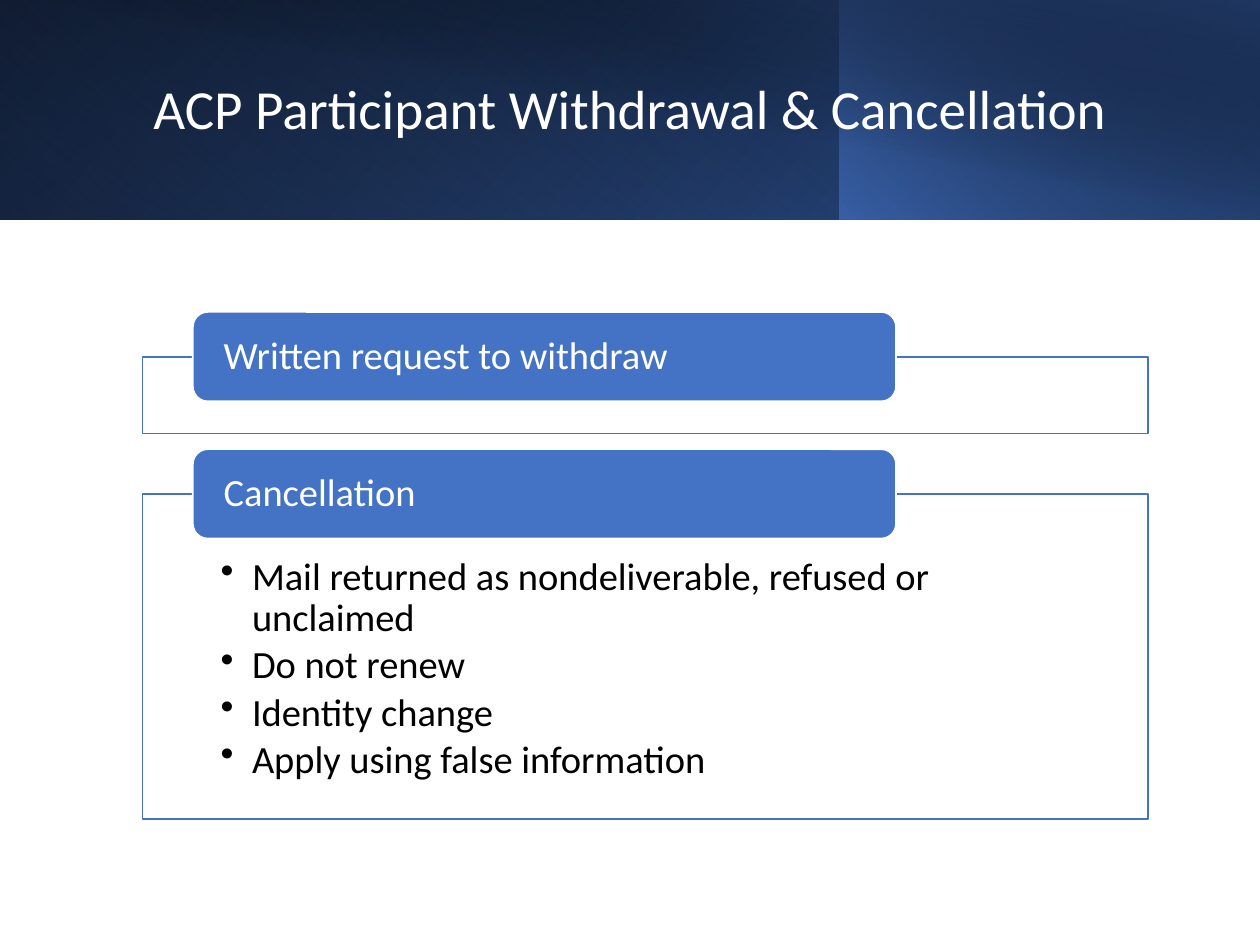
"""Build the slide on participant withdrawal and cancellation."""
from dataclasses import dataclass

from lxml.etree import SubElement
from pptx import Presentation
from pptx.dml.color import RGBColor
from pptx.enum.shapes import MSO_SHAPE
from pptx.enum.text import MSO_ANCHOR, PP_ALIGN
from pptx.oxml.ns import qn
from pptx.util import Pt

WHITE = RGBColor(0xFF, 0xFF, 0xFF)
BLACK = RGBColor(0x00, 0x00, 0x00)
BLUE = RGBColor(0x44, 0x72, 0xC4)
DEEP = RGBColor(0x2F, 0x55, 0x97)
NAVY = RGBColor(0x20, 0x38, 0x64)
FONT = "Calibri"
SIZE = 22
LEFT, WIDTH = 81.4, 574.6
TAB_LEFT, TAB_WIDTH, TAB_HIGH = 110.2, 401.8, 51.1


@dataclass(frozen=True)
class Stop:
    """One gradient stop, with place and opacity in percent."""
    place: int
    color: RGBColor
    alpha: int = 100


@dataclass(frozen=True)
class Band:
    """One gradient layer of the header."""
    left: float
    width: float
    high: float
    angle: int
    stops: tuple[Stop, ...]
    flip: bool = True
    turn: int = 0


@dataclass(frozen=True)
class Group:
    """A framed topic with a title tab and bullet points."""
    top: float
    high: float
    title: str
    points: tuple[str, ...] = ()


BANDS = (
    Band(0, 720, 125.3, 140, (Stop(0, BLACK), Stop(100, DEEP))),
    Band(0, 479.5, 125.3, 230, (Stop(20, BLUE, 0), Stop(100, NAVY, 55)), turn=180),
    Band(479.5, 240.5, 125.3, 220, (Stop(0, BLUE, 66), Stop(100, BLACK, 30))),
    Band(27.4, 692.6, 126, 280, (Stop(50, BLACK, 0), Stop(99, NAVY, 52)), flip=False),
)
GROUPS = (
    Group(203.8, 43.9, "Written request to withdraw"),
    Group(282.2, 185.8, "Cancellation", (
        "Mail returned as nondeliverable, refused or unclaimed",
        "Do not renew",
        "Identity change",
        "Apply using false information",
    )),
)


def add_box(slide, kind: MSO_SHAPE, left: float, top: float, width: float, high: float):
    """Add a preset shape without a shadow."""
    box = slide.shapes.add_shape(kind, Pt(left), Pt(top), Pt(width), Pt(high))
    box.shadow.inherit = False
    return box


def paint(box, fill: RGBColor, line: RGBColor) -> None:
    """Give a shape a solid fill and a thin outline."""
    box.fill.solid()
    box.fill.fore_color.rgb = fill
    box.line.color.rgb = line
    box.line.width = Pt(1)


def fade(color, alpha: int) -> None:
    """Set the opacity of a colour element in percent."""
    SubElement(color, qn("a:alpha"), val=str(alpha * 1000))


def set_frame(frame, side: float, top: float, base: float, anchor: MSO_ANCHOR) -> None:
    """Set the insets, wrapping and anchor of a text frame."""
    frame.word_wrap = True
    frame.margin_left = frame.margin_right = Pt(side)
    frame.margin_top, frame.margin_bottom = Pt(top), Pt(base)
    frame.vertical_anchor = anchor


def style(para, size: float, color: RGBColor, after: float = 0) -> None:
    """Format a paragraph and its runs."""
    para.alignment = PP_ALIGN.LEFT
    para.line_spacing = 0.9
    para.space_after = Pt(after)
    for run in para.runs:
        run.font.name = FONT
        run.font.size = Pt(size)
        run.font.color.rgb = color


def add_bullet(para) -> None:
    """Hang a round bullet in front of a paragraph."""
    props = para._p.get_or_add_pPr()
    props.set("marL", str(Pt(18)))
    props.set("indent", str(Pt(-18)))
    SubElement(props, qn("a:buChar"), char="•")


def draw_band(slide, band: Band) -> None:
    """Draw a gradient layer of the header."""
    box = add_box(slide, MSO_SHAPE.RECTANGLE, band.left, 0, band.width, band.high)
    box.rotation = band.turn
    box.line.fill.background()
    box.fill.background()
    props = box._element.spPr
    if band.flip:
        props.find(qn("a:xfrm")).set("flipH", "1")
    blank = props.find(qn("a:noFill"))
    grad = SubElement(props, qn("a:gradFill"), rotWithShape="1")
    props.replace(blank, grad)
    items = SubElement(grad, qn("a:gsLst"))
    for stop in band.stops:
        item = SubElement(items, qn("a:gs"), pos=str(stop.place * 1000))
        color = SubElement(item, qn("a:srgbClr"), val=str(stop.color))
        if stop.alpha < 100:
            fade(color, stop.alpha)
    SubElement(grad, qn("a:lin"), ang=str(band.angle * 60000), scaled="0")


def draw_title(slide, text: str) -> None:
    """Write the slide title over the header."""
    box = slide.shapes.add_textbox(Pt(80.6), Pt(23), Pt(584.6), Pt(81.4))
    frame = box.text_frame
    set_frame(frame, 7.2, 3.6, 3.6, MSO_ANCHOR.MIDDLE)
    frame.text = text
    style(frame.paragraphs[0], 31.5, WHITE)


def draw_group(slide, group: Group) -> None:
    """Draw a frame with its points and its title tab."""
    box = add_box(slide, MSO_SHAPE.RECTANGLE, LEFT, group.top, WIDTH, group.high)
    paint(box, WHITE, BLUE)
    fade(box._element.spPr.find(qn("a:solidFill"))[0], 90)
    if group.points:
        frame = box.text_frame
        set_frame(frame, 44.6, 36, 12.2, MSO_ANCHOR.TOP)
        frame.text = "\n".join(group.points)
        for para in frame.paragraphs:
            style(para, SIZE, BLACK, SIZE * 0.15)
            add_bullet(para)

    tab = add_box(slide, MSO_SHAPE.ROUNDED_RECTANGLE, TAB_LEFT,
                  group.top - TAB_HIGH / 2, TAB_WIDTH, TAB_HIGH)
    paint(tab, BLUE, WHITE)
    set_frame(tab.text_frame, 15.1, 0, 0, MSO_ANCHOR.MIDDLE)
    tab.text_frame.text = group.title
    style(tab.text_frame.paragraphs[0], SIZE, WHITE, SIZE * 0.35)


def main() -> None:
    """Build and save the deck."""
    deck = Presentation()
    deck.slide_width, deck.slide_height = Pt(720), Pt(540)
    slide = deck.slides.add_slide(deck.slide_layouts[6])
    for band in BANDS:
        draw_band(slide, band)
    draw_title(slide, "ACP Participant Withdrawal & Cancellation")
    for group in GROUPS:
        draw_group(slide, group)
    deck.save("out.pptx")


if __name__ == "__main__":
    main()
